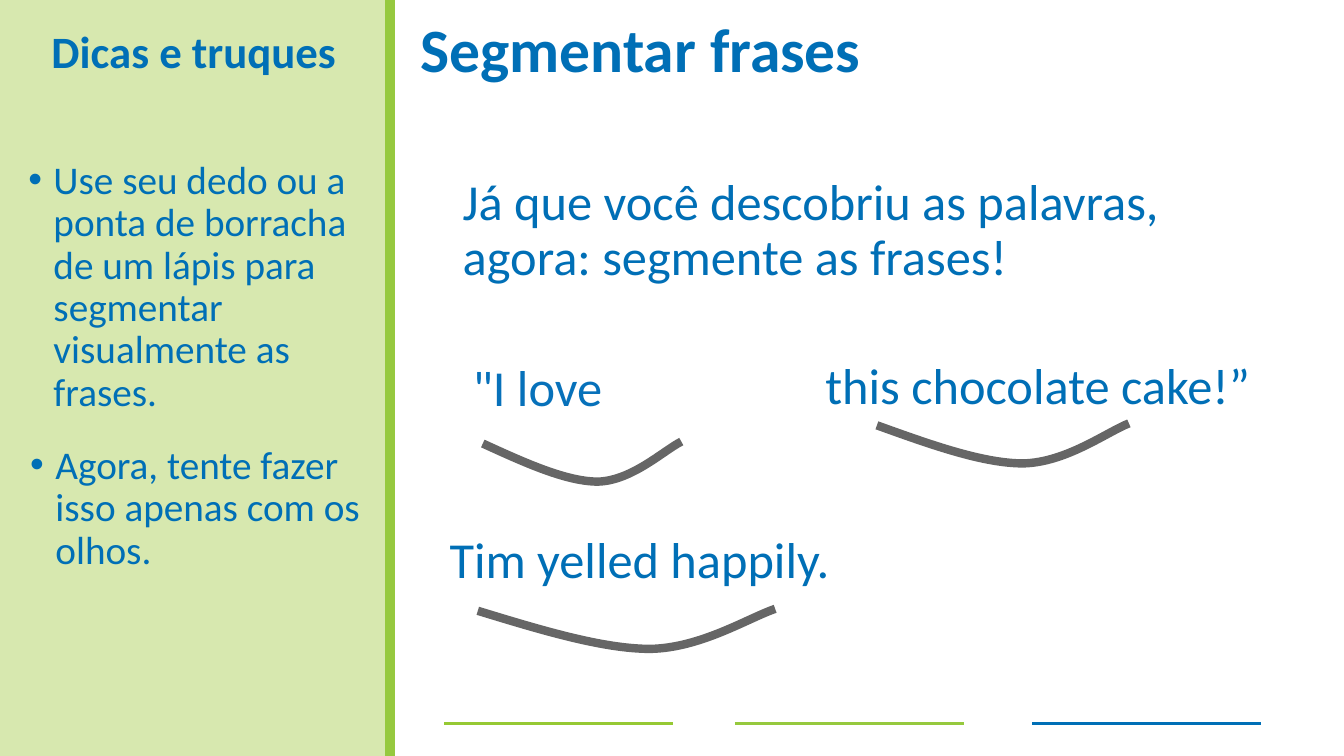
from lxml.etree import SubElement
from pptx import Presentation
from pptx.dml.color import RGBColor
from pptx.enum.shapes import MSO_CONNECTOR, MSO_SHAPE
from pptx.enum.text import MSO_ANCHOR, MSO_AUTO_SIZE, PP_ALIGN
from pptx.oxml.ns import qn
from pptx.util import Pt

COLORS = {
    "panel": "D7E8AF",
    "divider": "96C93F",
    "green": "96C934",
    "lime": "96C93E",
    "blue": "006FB6",
    "phrase": "0771BA",
    "scoop": "666666",
}
FONT = "Calibri"
PANEL_WIDTH = 278.64
SCOOP_CURVE = [(0, 1.4), (0.21, 15), (0.42, 28.6), (0.58, 28.6),
               (0.75, 28), (0.91, 6.5), (1, 0)]


def rgb(color):
    return RGBColor.from_string(COLORS[color])


def place(shape, left, top, width, height):
    shape.left, shape.top = Pt(left), Pt(top)
    shape.width, shape.height = Pt(width), Pt(height)


def add_bullet(paragraph):
    props = paragraph._p.get_or_add_pPr()
    props.set("marL", str(Pt(18)))
    props.set("indent", str(Pt(-18)))
    bullet_color = SubElement(props, qn("a:buClr"))
    SubElement(bullet_color, qn("a:srgbClr"), val=COLORS["blue"])
    SubElement(props, qn("a:buFont"), typeface="Arial")
    SubElement(props, qn("a:buChar"), char="•")


def write(shape, box, text, size, color="blue", bold=False,
          align=PP_ALIGN.LEFT, bullet=False, inset=(7.2, 3.6)):
    place(shape, *box)
    frame = shape.text_frame
    frame.word_wrap = True
    frame.auto_size = MSO_AUTO_SIZE.NONE
    frame.vertical_anchor = MSO_ANCHOR.TOP
    frame.margin_left, frame.margin_top = Pt(inset[0]), Pt(inset[1])
    frame.margin_right, frame.margin_bottom = Pt(7.2), Pt(3.6)
    frame.text = text
    paragraph = frame.paragraphs[0]
    if bullet:
        add_bullet(paragraph)
    paragraph.alignment = align
    paragraph.line_spacing = 0.9
    paragraph.space_before = Pt(0)
    font = paragraph.font
    font.name, font.size, font.bold = FONT, Pt(size), bold
    font.color.rgb = rgb(color)


def add_phrase(slide, box, text, **style):
    phrase = slide.shapes.add_textbox(0, 0, 0, 0)
    write(phrase, box, text, 36, **style)


def add_panel(slide, height):
    panel = slide.shapes.add_shape(
        MSO_SHAPE.RECTANGLE, 0, 0, Pt(PANEL_WIDTH), height)
    panel.shadow.inherit = False
    panel.fill.solid()
    panel.fill.fore_color.rgb = rgb("panel")
    panel.line.fill.background()
    slide.shapes._spTree.insert(2, panel._element)


def add_rule(slide, start, end, color, width):
    rule = slide.shapes.add_connector(
        MSO_CONNECTOR.STRAIGHT, *map(Pt, start + end))
    rule.line.color.rgb = rgb(color)
    rule.line.width = Pt(width)
    SubElement(rule._element.spPr, qn("a:effectLst"))


def add_scoop(slide, left, top, width):
    points = [(Pt(left + x * width), Pt(top + y)) for x, y in SCOOP_CURVE]
    builder = slide.shapes.build_freeform(*points[0])
    builder.add_line_segments(points[1:], close=False)
    scoop = builder.convert_to_shape()
    scoop.shadow.inherit = False
    scoop.fill.background()
    scoop.line.color.rgb = rgb("scoop")
    scoop.line.width = Pt(6)
    outline = scoop._element.find(".//" + qn("a:path"))
    segments = outline.findall(qn("a:lnTo"))
    for first in range(0, len(segments), 3):
        curve = SubElement(outline, qn("a:cubicBezTo"))
        for segment in segments[first:first + 3]:
            curve.append(segment[0])
            outline.remove(segment)


def main():
    deck = Presentation()
    deck.slide_width, deck.slide_height = Pt(960), Pt(540)
    slide = deck.slides.add_slide(deck.slide_layouts[4])
    title, heading, first_tip, instruction, second_tip = slide.placeholders

    add_panel(slide, deck.slide_height)
    add_rule(slide, (PANEL_WIDTH, 0), (PANEL_WIDTH, 540), "divider", 7)
    for left, color in ((317.5, "green"), (525, "lime"), (737.3, "blue")):
        add_rule(slide, (left, 517), (left + 163.5, 517), color, 2)

    write(title, (PANEL_WIDTH, 0, 448, 124), "Segmentar frases", 44,
          bold=True, inset=(21.6, 13.6))
    write(heading, (13, 18, 251, 68), "Dicas e truques", 32,
          bold=True, align=PP_ALIGN.CENTER)
    write(first_tip, (13, 111, 250, 178),
          "Use seu dedo ou a ponta de borracha de um lápis para "
          "segmentar visualmente as frases.", 28, bullet=True)
    write(second_tip, (14.4, 314.6, 250, 178),
          "Agora, tente fazer isso apenas com os olhos.", 28, bullet=True)
    write(instruction, (323.3, 123, 594, 70.6),
          "Já que você descobriu as palavras, agora: segmente as frases!", 36)

    add_phrase(slide, (314, 378.7, 296.6, 70.6), "Tim yelled happily.")
    add_phrase(slide, (582.5, 254.2, 369.4, 70.6), "this chocolate cake!”")
    add_phrase(slide, (312.5, 255.6, 270, 70.6), "\"I love",
               color="phrase", inset=(25.2, 3.6))

    for left, top, width in ((344.9, 315.4, 141.8), (626.4, 302.4, 180),
                             (341.3, 434.9, 212.4)):
        add_scoop(slide, left, top, width)

    deck.save("out.pptx")


if __name__ == "__main__":
    main()
